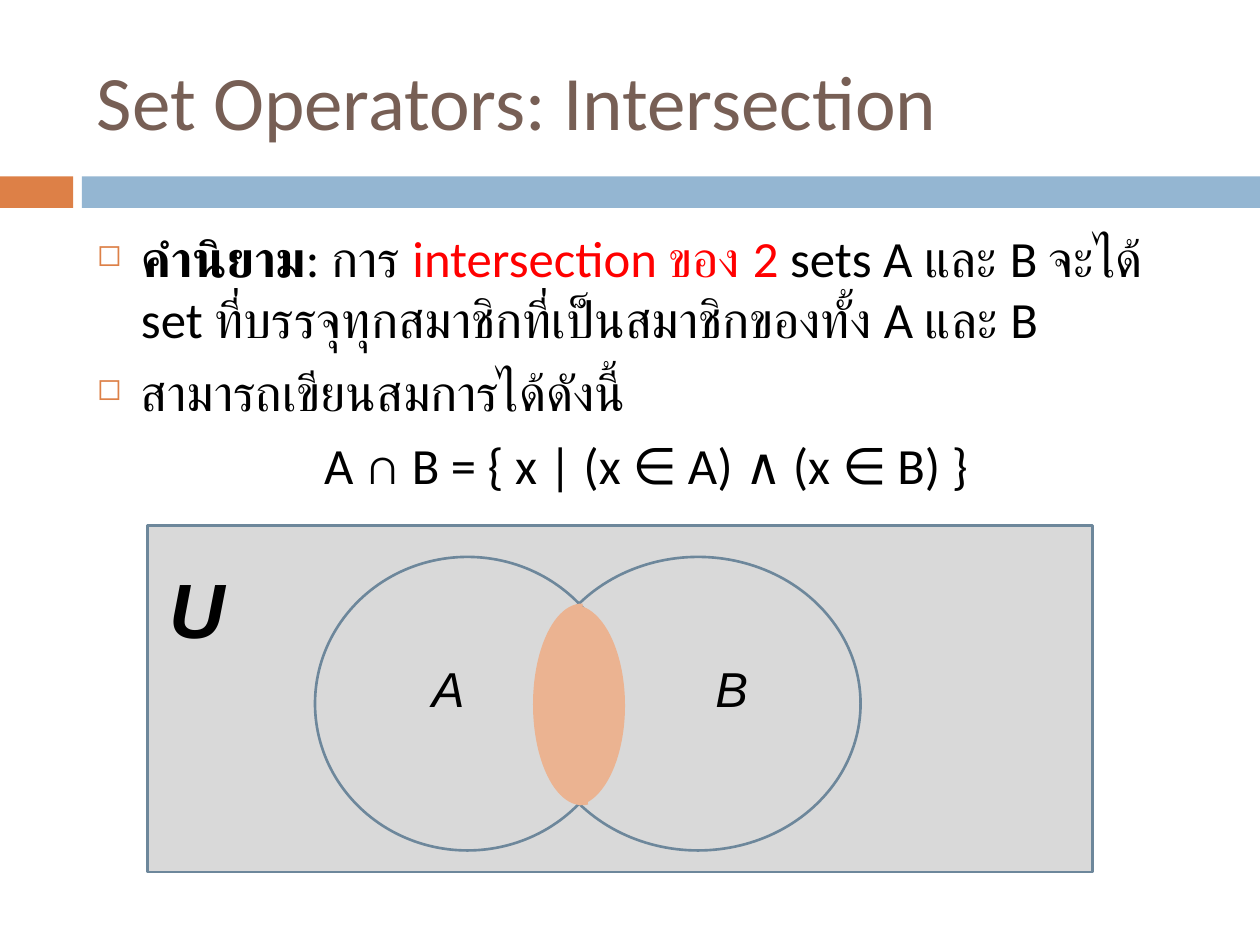
from dataclasses import dataclass
from typing import Optional

from lxml import etree
from pptx import Presentation
from pptx.dml.color import RGBColor
from pptx.enum.shapes import MSO_SHAPE
from pptx.enum.text import MSO_ANCHOR, PP_ALIGN
from pptx.oxml.ns import qn
from pptx.util import Inches, Pt

COLORS = {
    "orange": "DD8047", "blue": "94B6D2", "title": "775F55", "text": "000000",
    "accent": "FF0000", "universe": "D9D9D9", "outline": "6D879B", "overlap": "EBB391",
}


@dataclass
class Figure:
    kind: MSO_SHAPE
    box: tuple[float, float, float, float]
    fill: Optional[str] = None
    line: Optional[str] = None
    rotation: float = 0
    angles: tuple[float, ...] = ()


@dataclass
class Run:
    text: str
    color: str = "text"
    bold: bool = False


@dataclass
class Label:
    text: str
    box: tuple[float, float, float, float]
    size: int
    bold: bool = False


def rgb(name: str) -> RGBColor:
    return RGBColor.from_string(COLORS[name])


def draw_figure(slide, figure: Figure) -> None:
    shape = slide.shapes.add_shape(figure.kind, *map(Inches, figure.box))
    shape.shadow.inherit = False
    shape.rotation = figure.rotation
    for index, angle in enumerate(figure.angles):
        shape.adjustments[index] = angle
    if figure.fill:
        shape.fill.solid()
        shape.fill.fore_color.rgb = rgb(figure.fill)
    else:
        shape.fill.background()
    if figure.line:
        shape.line.color.rgb = rgb(figure.line)
        shape.line.width = Pt(1.5)
    else:
        shape.line.fill.background()


def add_text_frame(slide, box, anchor=MSO_ANCHOR.TOP):
    frame = slide.shapes.add_textbox(*map(Inches, box)).text_frame
    frame.word_wrap = True
    frame.vertical_anchor = anchor
    return frame


def write(paragraph, runs: list[Run], *, size: int, font: str = "Calibri",
          italic: bool = False, align=PP_ALIGN.LEFT, space_before: float = 0) -> None:
    paragraph.alignment = align
    paragraph.space_before = Pt(space_before)
    for part in runs:
        run = paragraph.add_run()
        run.text = part.text
        run.font.name = font
        run.font.size = Pt(size)
        run.font.bold = part.bold
        run.font.italic = italic
        run.font.color.rgb = rgb(part.color)


def hang(paragraph, bullet: bool) -> None:
    properties = paragraph._p.get_or_add_pPr()
    properties.set("marL", str(Inches(0.35)))
    properties.set("indent", str(Inches(-0.35)))
    if bullet:
        color = etree.SubElement(properties, qn("a:buClr"))
        etree.SubElement(color, qn("a:srgbClr"), val=COLORS["orange"])
        etree.SubElement(properties, qn("a:buSzPct"), val="60000")
        etree.SubElement(properties, qn("a:buChar"), char="◻")


BANDS = [
    Figure(MSO_SHAPE.RECTANGLE, (0, 1.4, 0.58, 0.25), "orange"),
    Figure(MSO_SHAPE.RECTANGLE, (0.65, 1.4, 9.35, 0.25), "blue"),
]
UNIVERSE = Figure(MSO_SHAPE.RECTANGLE, (1.17, 4.17, 7.5, 2.75), "universe", "outline")
LABELS = [
    Label("U", (1.25, 4.41, 0.58, 0.84), 44, bold=True),
    Label("A", (3.33, 5.18, 0.42, 0.57), 28),
    Label("B", (5.58, 5.18, 0.42, 0.57), 28),
]
# Two circles, then the right and left halves of their overlap
SETS = [
    Figure(MSO_SHAPE.OVAL, (2.5, 4.42, 2.42, 2.33), line="outline"),
    Figure(MSO_SHAPE.OVAL, (4.25, 4.42, 2.58, 2.33), line="outline"),
    Figure(MSO_SHAPE.ARC, (4.14, 4.81, 0.81, 1.58), "overlap", "overlap",
           angles=(163.99, 51.74)),
    Figure(MSO_SHAPE.ARC, (4.24, 4.8, 0.76, 1.58), "overlap", "overlap",
           rotation=180, angles=(160, 54.18)),
]
DEFINITION = [
    [Run("คำนิยาม", bold=True), Run(": การ "), Run("intersection ของ 2 ", "accent"),
     Run("sets A และ B จะได้ set ที่บรรจุทุกสมาชิกที่เป็นสมาชิกของทั้ง A และ B")],
    [Run("สามารถเขียนสมการได้ดังนี้")],
]
EQUATION = [Run("A ∩ B = { x | (x ∈ A) ∧ (x ∈ B) }")]


def main() -> None:
    presentation = Presentation()
    presentation.slide_width, presentation.slide_height = Inches(10), Inches(7.5)
    slide = presentation.slides.add_slide(presentation.slide_layouts[6])

    # Header
    for band in BANDS:
        draw_figure(slide, band)
    title = add_text_frame(slide, (0.67, 0.25, 8.92, 1.08), MSO_ANCHOR.MIDDLE)
    write(title.paragraphs[0], [Run("Set Operators: Intersection", "title")], size=44)

    # Definition and equation
    body = add_text_frame(slide, (0.67, 1.75, 8.92, 4.92))
    for index, runs in enumerate([*DEFINITION, EQUATION]):
        paragraph = body.paragraphs[0] if index == 0 else body.add_paragraph()
        is_equation = runs is EQUATION
        write(paragraph, runs, size=29, space_before=7,
              align=PP_ALIGN.CENTER if is_equation else PP_ALIGN.LEFT)
        hang(paragraph, bullet=not is_equation)

    # Venn diagram
    draw_figure(slide, UNIVERSE)
    for label in LABELS:
        frame = add_text_frame(slide, label.box)
        write(frame.paragraphs[0], [Run(label.text, bold=label.bold)],
              size=label.size, font="Arial", italic=True)
    for figure in SETS:
        draw_figure(slide, figure)

    presentation.save("out.pptx")


if __name__ == "__main__":
    main()
